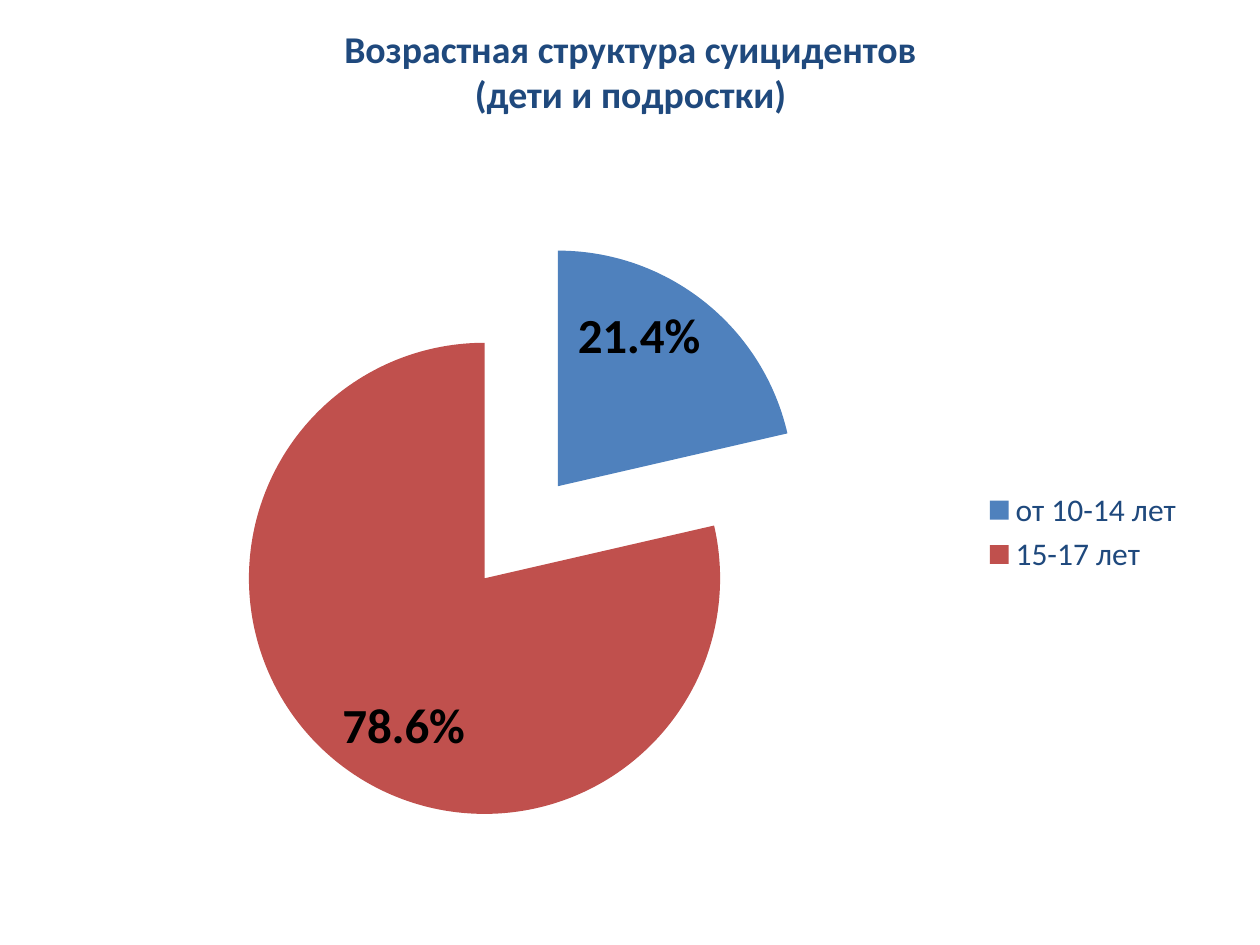
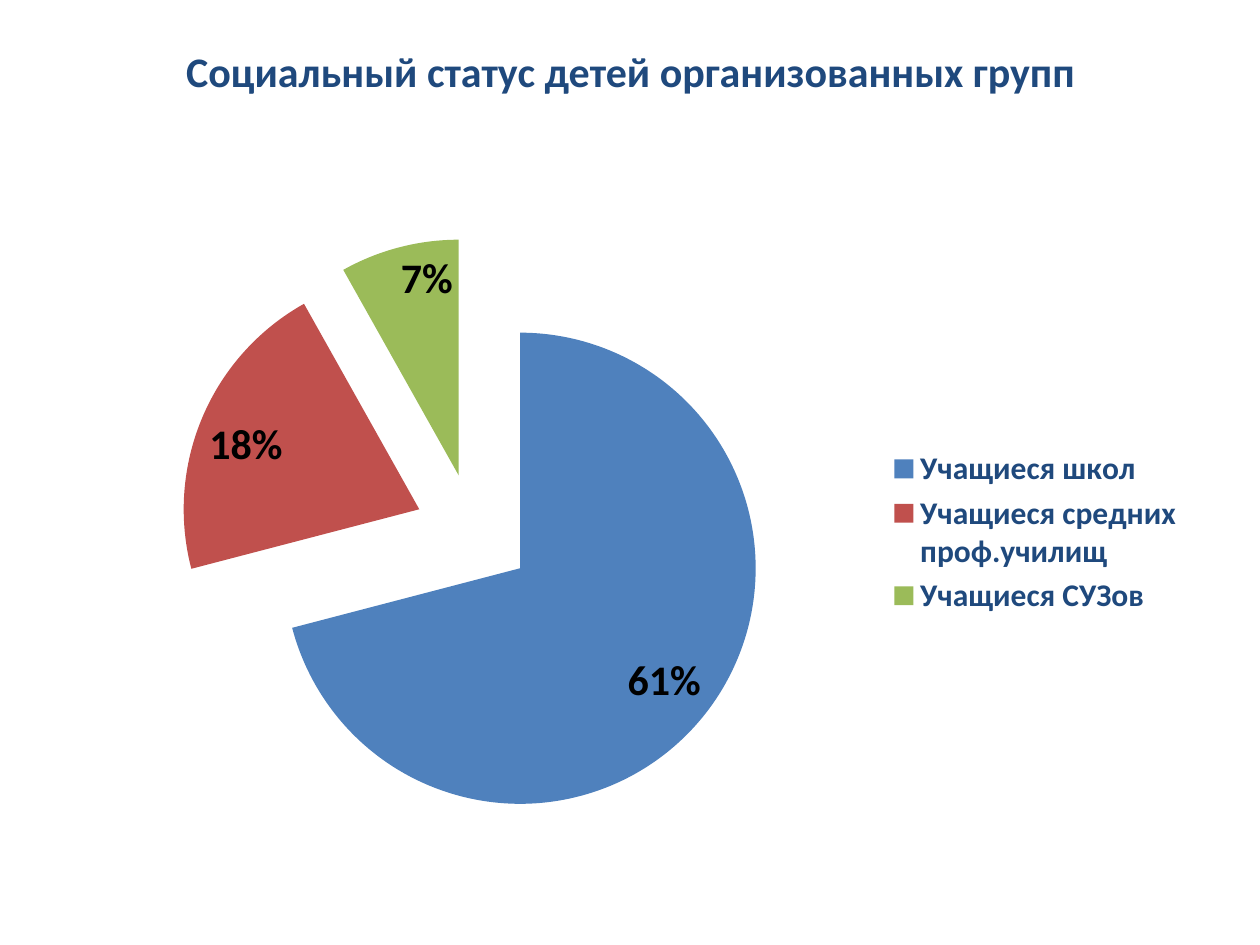
from lxml import etree
from pptx import Presentation
from pptx.chart.data import CategoryChartData
from pptx.dml.color import RGBColor
from pptx.enum.chart import XL_CHART_TYPE, XL_LABEL_POSITION, XL_LEGEND_POSITION
from pptx.enum.text import MSO_ANCHOR, PP_ALIGN
from pptx.oxml.ns import qn
from pptx.util import Inches, Pt

FONT = "Calibri"
NAVY, BLACK = "1F497D", "000000"
SLICE_COLORS = ["4F81BD", "C0504D", "9BBB59"]
EXPLOSION = 25

SLIDE_W, SLIDE_H = Inches(10), Inches(7.5)
MARGIN = 0.05 * SLIDE_W
CHART_BOX = (MARGIN, Inches(1.75), SLIDE_W - 2 * MARGIN, Inches(4.95))
TITLE_LEFT, TITLE_W = Inches(0.28), Inches(9.45)
TITLE_MIDDLE = Inches(0.56)


def rgb(value):
    return RGBColor.from_string(value)


def style_font(font, size, color, bold=False):
    font.name = FONT
    font.size = Pt(size)
    font.bold = bold
    font.color.rgb = rgb(color)


def add_title(s, text, size, height):
    """Centre the title on the line shared by all slides."""
    h = Inches(height)
    box = s.shapes.add_textbox(TITLE_LEFT, TITLE_MIDDLE - h // 2, TITLE_W, h)
    tf = box.text_frame
    tf.word_wrap = True
    tf.vertical_anchor = MSO_ANCHOR.MIDDLE
    p = tf.paragraphs[0]
    p.text = text
    p.alignment = PP_ALIGN.CENTER
    for r in p.runs:
        style_font(r.font, size, NAVY, bold=True)


def explode(series):
    explosion = etree.Element(qn("c:explosion"), val=str(EXPLOSION))
    series._element.find(qn("c:tx")).addnext(explosion)


def add_pie(s, box, shares, number_format, label_size, legend_bold):
    data = CategoryChartData(number_format=number_format)
    data.categories = list(shares)
    data.add_series("Series 1", list(shares.values()))
    left, top, width, height = map(int, box)
    chart = s.shapes.add_chart(XL_CHART_TYPE.PIE, left, top, width, height, data).chart
    style_font(chart.font, 18, BLACK)
    chart.has_title = False
    chart.has_legend = True
    chart.legend.position = XL_LEGEND_POSITION.RIGHT
    chart.legend.include_in_layout = False
    style_font(chart.legend.font, 18, NAVY, legend_bold)

    series = chart.plots[0].series[0]
    explode(series)
    for i, color in enumerate(SLICE_COLORS[:len(shares)]):
        fill = series.points[i].format.fill
        fill.solid()
        fill.fore_color.rgb = rgb(color)

    labels = series.data_labels
    labels.show_value = True
    labels.number_format = number_format
    labels.number_format_is_linked = False
    labels.position = XL_LABEL_POSITION.INSIDE_END
    style_font(labels.font, label_size, BLACK, bold=True)


def add_pie_slide(prs, title, title_size, title_height, **pie):
    s = prs.slides.add_slide(prs.slide_layouts[6])
    add_title(s, title, title_size, title_height)
    add_pie(s, CHART_BOX, **pie)


def main():
    prs = Presentation()
    prs.slide_width, prs.slide_height = SLIDE_W, SLIDE_H
    add_pie_slide(
        prs, "Возрастная структура суицидентов\v(дети и подростки)", 21.6, 0.69,
        shares={"от 10-14 лет": 0.214, "15-17 лет": 0.786},
        number_format="0.0%", label_size=28, legend_bold=False)
    add_pie_slide(
        prs, "Социальный статус детей организованных групп", 24, 0.54,
        shares={"Учащиеся школ": 0.61,
                "Учащиеся средних проф.училищ": 0.18,
                "Учащиеся СУЗов": 0.07},
        number_format="0%", label_size=24, legend_bold=True)
    prs.save("out.pptx")


if __name__ == "__main__":
    main()
